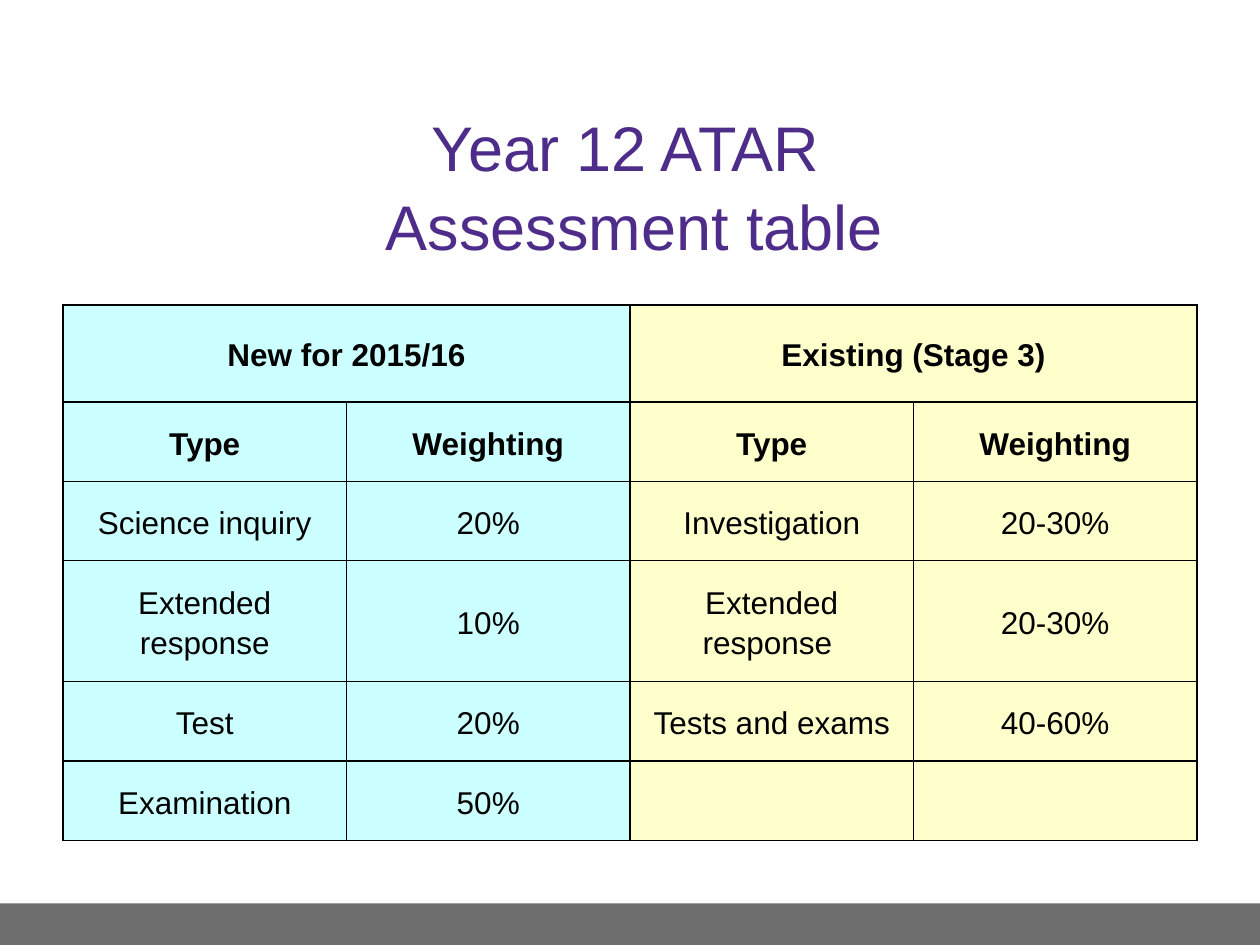
from dataclasses import dataclass

from lxml import etree
from pptx import Presentation
from pptx.dml.color import RGBColor
from pptx.enum.shapes import MSO_SHAPE
from pptx.enum.text import MSO_ANCHOR, PP_ALIGN
from pptx.oxml.ns import qn
from pptx.util import Inches, Pt

RECTANGLE = MSO_SHAPE.RECTANGLE
MIDDLE = MSO_ANCHOR.MIDDLE
CENTER = PP_ALIGN.CENTER


@dataclass(frozen=True)
class Theme:
    font: str = "Arial"
    title_size: int = 36
    table_size: int = 18
    title: str = "4D2C8A"
    text: str = "000000"
    border: str = "000000"
    new_course: str = "CCFFFF"
    existing_course: str = "FFFFCC"
    footer: str = "6E6E6E"


THEME = Theme()

COLUMN_WIDTH = 2.25
ROW_HEIGHTS = [0.77, 0.63, 0.63, 0.96, 0.63, 0.63]
HEADER_ROWS = 2
ASSESSMENTS = [
    ["New for 2015/16", "", "Existing (Stage 3)", ""],
    ["Type", "Weighting", "Type", "Weighting"],
    ["Science inquiry", "20%", "Investigation", "20-30%"],
    ["Extended response", "10%", "Extended response ", "20-30%"],
    ["Test", "20%", "Tests and exams", "40-60%"],
    ["Examination", "50%", "", ""],
]


def style_paragraph(paragraph, size, color, spacing, bold=False):
    paragraph.alignment = CENTER
    paragraph.line_spacing = spacing
    font = paragraph.font
    font.name = THEME.font
    font.size = Pt(size)
    font.bold = bold
    font.color.rgb = RGBColor.from_string(color)


def add_footer_band(slide):
    band = slide.shapes.add_shape(
        RECTANGLE, Inches(0), Inches(7.17), Inches(10), Inches(0.33))
    band.shadow.inherit = False
    band.fill.solid()
    band.fill.fore_color.rgb = RGBColor.from_string(THEME.footer)
    band.line.fill.background()


def add_title(slide, wording):
    title = slide.shapes.add_textbox(
        Inches(0.36), Inches(0.92), Inches(9.35), Inches(1.08)).text_frame
    title.word_wrap = True
    title.vertical_anchor = MIDDLE
    title.text = wording
    style_paragraph(title.paragraphs[0], THEME.title_size, THEME.title, 1.05)


def add_borders(cell):
    properties = cell._tc.get_or_add_tcPr()
    # Borders must come before the fill in the cell properties
    for position, side in enumerate(("a:lnL", "a:lnR", "a:lnT", "a:lnB")):
        border = etree.Element(qn(side), w=str(Pt(1)))
        fill = etree.SubElement(border, qn("a:solidFill"))
        etree.SubElement(fill, qn("a:srgbClr"), val=THEME.border)
        properties.insert(position, border)


def fill_cell(cell, wording, color, bold):
    cell.text = wording
    cell.vertical_anchor = MIDDLE
    cell.margin_left = cell.margin_right = Inches(0.07)
    cell.margin_top = cell.margin_bottom = 0
    cell.fill.solid()
    cell.fill.fore_color.rgb = RGBColor.from_string(color)
    style_paragraph(cell.text_frame.paragraphs[0], THEME.table_size,
                    THEME.text, 1.15, bold)
    add_borders(cell)


def add_assessment_table(slide):
    column_count = len(ASSESSMENTS[0])
    table = slide.shapes.add_table(
        len(ASSESSMENTS), column_count, Inches(0.5), Inches(2.42),
        Inches(COLUMN_WIDTH * column_count), Inches(sum(ROW_HEIGHTS))).table

    for column in table.columns:
        column.width = Inches(COLUMN_WIDTH)
    for row, height in zip(table.rows, ROW_HEIGHTS):
        row.height = Inches(height)

    # The left half holds the new course, the right half the existing one
    half = column_count // 2
    for r, assessment in enumerate(ASSESSMENTS):
        for c, wording in enumerate(assessment):
            color = THEME.new_course if c < half else THEME.existing_course
            fill_cell(table.cell(r, c), wording, color, r < HEADER_ROWS)

    # Each course heading spans its two columns
    for first in (0, half):
        table.cell(0, first).merge(table.cell(0, first + half - 1))


def main():
    presentation = Presentation()
    presentation.slide_width = Inches(10)
    presentation.slide_height = Inches(7.5)
    slide = presentation.slides.add_slide(presentation.slide_layouts[6])

    add_footer_band(slide)
    add_title(slide, "Year 12 ATAR \vAssessment table")
    add_assessment_table(slide)

    presentation.save("out.pptx")


if __name__ == "__main__":
    main()
